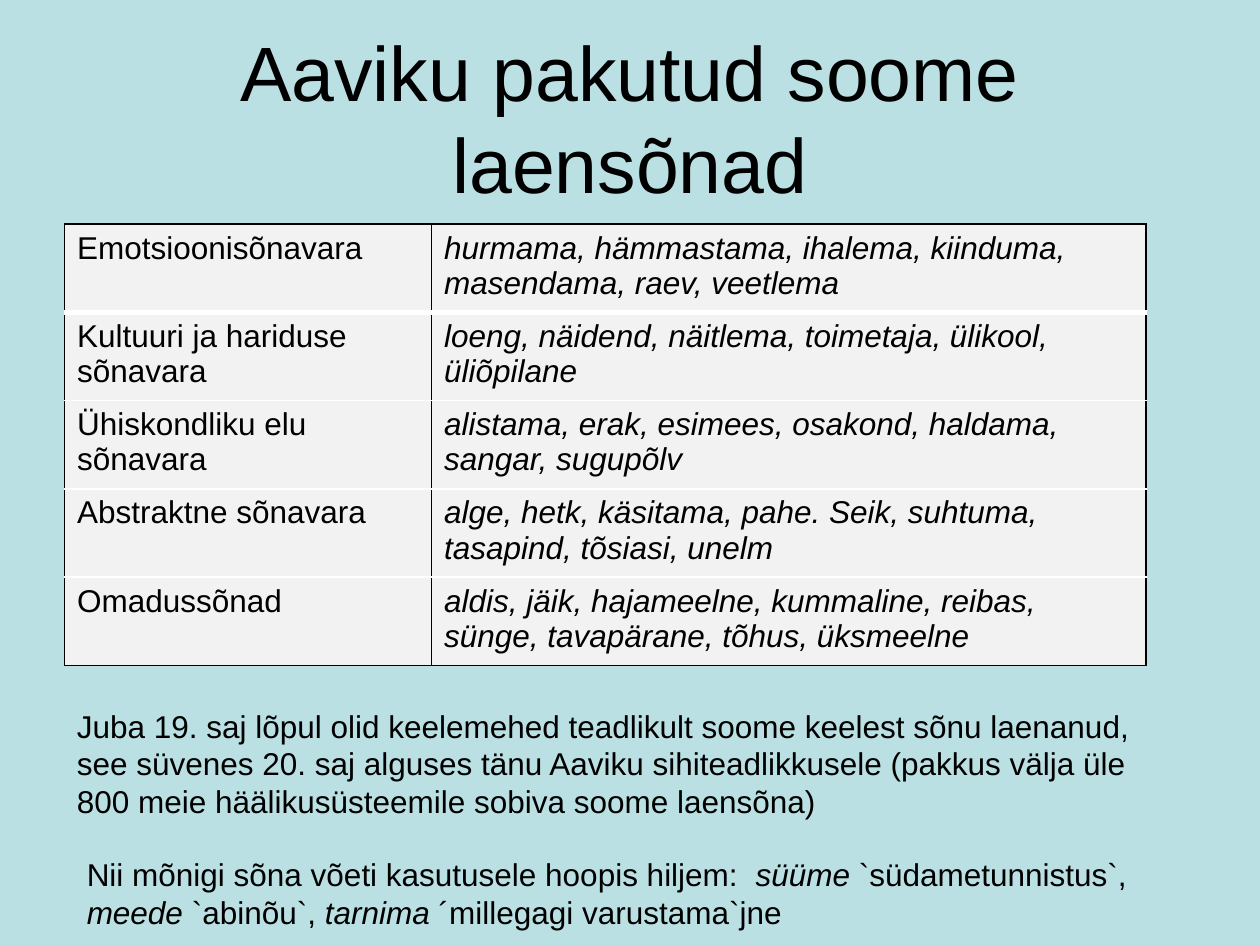
from lxml.etree import SubElement
from pptx import Presentation
from pptx.dml.color import RGBColor
from pptx.enum.text import MSO_ANCHOR, PP_ALIGN
from pptx.oxml.ns import qn
from pptx.util import Cm, Pt

BACKGROUND = RGBColor(0xBB, 0xE0, 0xE3)
CELL_FILL = RGBColor(0xF2, 0xF2, 0xF2)
BLACK = RGBColor(0, 0, 0)
WHITE = RGBColor(0xFF, 0xFF, 0xFF)

TITLE_FONT = {"name": "Arial", "size": Pt(44)}
BODY_FONT = {"name": "Arial", "size": Pt(18)}

TITLE = "Aaviku pakutud soome laensõnad"
VOCABULARY = [
    ("Emotsioonisõnavara",
     "hurmama, hämmastama, ihalema, kiinduma, masendama, raev, veetlema"),
    ("Kultuuri ja hariduse sõnavara",
     "loeng, näidend, näitlema, toimetaja, ülikool, üliõpilane"),
    ("Ühiskondliku elu sõnavara",
     "alistama, erak, esimees, osakond, haldama, sangar, sugupõlv"),
    ("Abstraktne sõnavara",
     "alge, hetk, käsitama, pahe. Seik, suhtuma, tasapind, tõsiasi, unelm"),
    ("Omadussõnad",
     "aldis, jäik, hajameelne, kummaline, reibas, sünge, tavapärane, tõhus, "
     "üksmeelne"),
]
# Each run is (text, italic)
HISTORY_NOTE = [
    ("Juba 19. saj lõpul olid keelemehed teadlikult soome keelest sõnu laenanud, "
     "see süvenes 20. saj alguses tänu Aaviku sihiteadlikkusele (pakkus välja üle "
     "800 meie häälikusüsteemile sobiva soome laensõna)", False),
]
LATER_NOTE = [
    ("Nii mõnigi sõna võeti kasutusele hoopis hiljem:  ", False),
    ("süüme", True),
    (" `südametunnistus`, ", False),
    ("meede", True),
    (" `abinõu`, ", False),
    ("tarnima", True),
    (" ´millegagi varustama`jne", False),
]


def add_run(p, text, font, italic=False):
    r = p.add_run()
    r.text = text
    for name, value in {**font, "italic": italic}.items():
        setattr(r.font, name, value)
    r.font.color.rgb = BLACK


def add_text(slide, box, runs, font, anchor=MSO_ANCHOR.TOP, align=PP_ALIGN.LEFT):
    tf = slide.shapes.add_textbox(*map(Cm, box)).text_frame
    tf.word_wrap = True
    tf.vertical_anchor = anchor
    p = tf.paragraphs[0]
    p.alignment = align
    for text, italic in runs:
        add_run(p, text, font, italic)


def set_borders(cell, borders):
    """Draw cell edges from (side, colour, points), in L, R, T, B order."""
    tc_pr = cell._tc.get_or_add_tcPr()
    for i, (side, color, width) in enumerate(borders):
        ln = SubElement(tc_pr, qn(f"a:ln{side}"), w=str(Pt(width)))
        fill = SubElement(ln, qn("a:solidFill"))
        SubElement(fill, qn("a:srgbClr"), val=str(color))
        tc_pr.insert(i, ln)


def add_vocabulary(slide, box):
    left, top, width, height = box
    last = len(VOCABULARY) - 1
    table = slide.shapes.add_table(len(VOCABULARY), 2, *map(Cm, box)).table
    table.first_row = table.horz_banding = False
    label_width = 7.4
    for col, w in zip(table.columns, (label_width, width - label_width)):
        col.width = Cm(w)

    # White rules between rows, thicker below the first; black outer frame
    rules = [(BLACK, 1), (WHITE, 3)] + [(WHITE, 1)] * (last - 1) + [(BLACK, 1)]
    for i, row in enumerate(VOCABULARY):
        table.rows[i].height = Cm(height / len(VOCABULARY))
        for j, text in enumerate(row):
            cell = table.cell(i, j)
            cell.fill.solid()
            cell.fill.fore_color.rgb = CELL_FILL
            add_run(cell.text_frame.paragraphs[0], text, BODY_FONT, italic=j == 1)
            set_borders(cell, [("L", BLACK, 1), ("R", BLACK, 1),
                               ("T", *rules[i]), ("B", *rules[i + 1])])


def main():
    prs = Presentation()
    prs.slide_width, prs.slide_height = Cm(25.4), Cm(19.05)
    slide = prs.slides.add_slide(prs.slide_layouts[6])
    slide.background.fill.solid()
    slide.background.fill.fore_color.rgb = BACKGROUND

    # Title
    add_text(slide, (1.27, 0.76, 22.86, 3.18), [(TITLE, False)], TITLE_FONT,
             MSO_ANCHOR.MIDDLE, PP_ALIGN.CENTER)
    # Loanwords by field
    add_vocabulary(slide, (1.3, 4.52, 21.8, 8.4))
    # Notes below the table
    add_text(slide, (1.3, 14.12, 21.8, 2.57), HISTORY_NOTE, BODY_FONT)
    add_text(slide, (1.5, 17.12, 22.8, 1.8), LATER_NOTE, BODY_FONT)

    prs.save("out.pptx")


if __name__ == "__main__":
    main()
